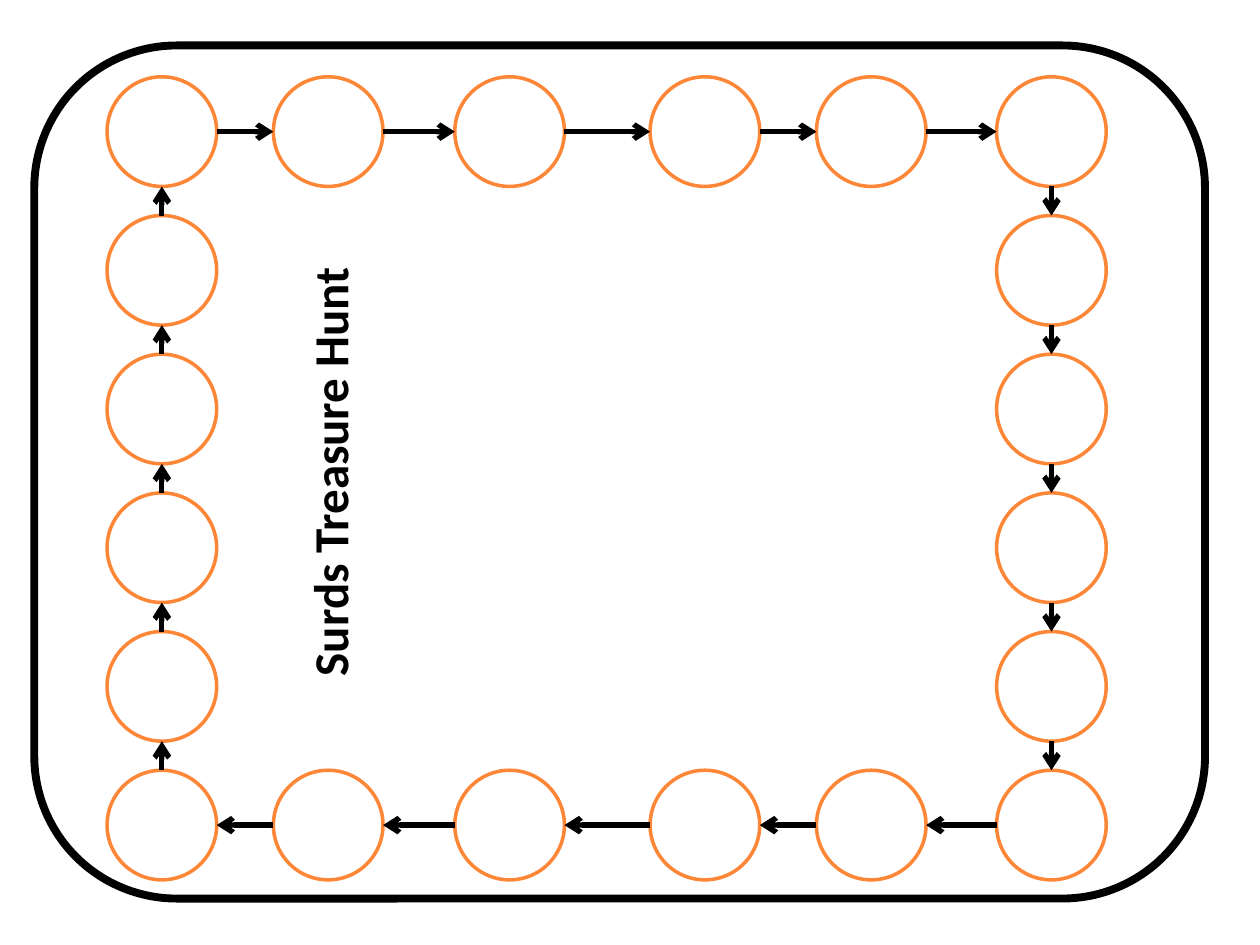
from itertools import pairwise

from pptx import Presentation
from pptx.dml.color import RGBColor
from pptx.enum.shapes import MSO_CONNECTOR as CONN, MSO_SHAPE as SHAPE
from pptx.enum.text import MSO_AUTO_SIZE as AUTO, PP_ALIGN as ALIGN
from pptx.oxml.ns import qn
from pptx.util import Pt
from lxml.etree import SubElement

BLACK, WHITE, ORANGE = "000000", "FFFFFF", "FE8637"


def color(value):
    return RGBColor.from_string(value)


def write(tf, text, font="Calibri", size=18, bold=False, ink=BLACK, align=ALIGN.LEFT):
    p = tf.paragraphs[0]
    p.alignment = align
    r = p.add_run()
    r.text = text
    r.font.name, r.font.size, r.font.bold = font, Pt(size), bold
    r.font.color.rgb = color(ink)


class Board:
    """Style of the game board and the slide it is drawn on."""
    diameter = 62.64
    circle_line, arrow_line, frame_line = 2, 3, 4.5

    def __init__(self, slide):
        self.slide = slide
        self.group = slide.shapes.add_group_shape()

    def shape(self, kind, x, y, w, h, line, width, fill=None):
        sp = self.group.shapes.add_shape(kind, Pt(x), Pt(y), Pt(w), Pt(h))
        sp.shadow.inherit = False
        if fill:
            sp.fill.solid()
            sp.fill.fore_color.rgb = color(fill)
        else:
            sp.fill.background()
        sp.line.color.rgb = color(line)
        sp.line.width = Pt(width)
        return sp

    def frame(self, x, y, w, h):
        sp = self.shape(SHAPE.ROUNDED_RECTANGLE, x, y, w, h, BLACK, self.frame_line)
        sp.adjustments[0] = 0.167

    def circle(self, x, y):
        d = self.diameter
        self.shape(SHAPE.OVAL, x, y, d, d, ORANGE, self.circle_line, WHITE)

    def arrow(self, start, end):
        """Join the rims of two circles that share a row or a column."""
        radius = self.diameter / 2
        steps = [(b > a) - (b < a) for a, b in zip(start, end)]
        tail = [a + radius * (1 + step) for a, step in zip(start, steps)]
        head = [b + radius * (1 - step) for b, step in zip(end, steps)]
        cx = self.group.shapes.add_connector(CONN.STRAIGHT, *map(Pt, tail + head))
        cx.line.color.rgb = color(BLACK)
        cx.line.width = Pt(self.arrow_line)
        SubElement(cx.line._get_or_add_ln(), qn("a:tailEnd"), type="arrow")
        SubElement(cx._element.spPr, qn("a:effectLst"))

    def title(self, text, x, y, w, h):
        sp = self.slide.shapes.add_textbox(Pt(x), Pt(y), Pt(w), Pt(h))
        sp.rotation = 270
        tf = sp.text_frame
        tf.word_wrap = True
        tf.auto_size = AUTO.SHAPE_TO_FIT_TEXT
        write(tf, text, size=28, bold=True, align=ALIGN.CENTER)


def main():
    prs = Presentation()
    prs.slide_width, prs.slide_height = Pt(720), Pt(540)
    board = Board(prs.slides.add_slide(prs.slide_layouts[6]))

    # Frame
    board.frame(19.6, 26, 669, 487.5)

    # Trail of circles, clockwise from the top left
    columns = [61.2, 156.24, 259.92, 371.52, 466.56, 569.52]
    rows = [43.92 + 79.25 * i for i in range(6)]
    left, right, top, bottom = columns[0], columns[-1], rows[0], rows[-1]
    trail = [(x, top) for x in columns]
    trail += [(right, y) for y in rows[1:]]
    trail += [(x, bottom) for x in columns[-2::-1]]
    trail += [(left, y) for y in rows[-2:0:-1]]
    for spot in trail:
        board.circle(*spot)

    # Arrows from each circle to the next, closing the loop
    for start, end in pairwise(trail + trail[:1]):
        board.arrow(start, end)

    # Title, reading upwards
    board.title("Surds Treasure Hunt", 49, 249.1, 278, 41)

    prs.save("out.pptx")


if __name__ == "__main__":
    main()
